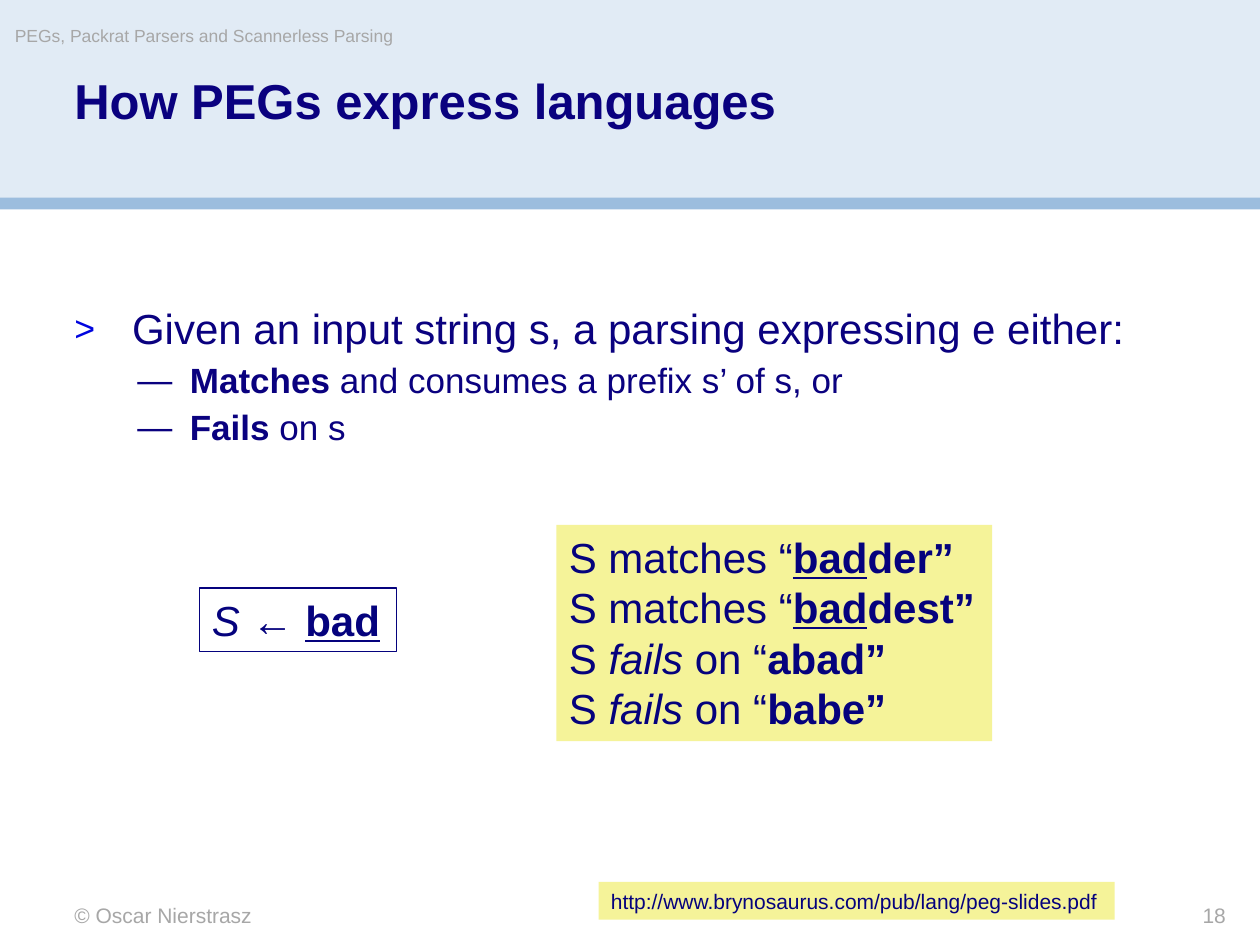
from dataclasses import dataclass

from lxml import etree
from pptx import Presentation
from pptx.dml.color import RGBColor
from pptx.enum.shapes import MSO_SHAPE
from pptx.enum.text import MSO_ANCHOR, MSO_AUTO_SIZE, PP_ALIGN
from pptx.oxml.ns import qn
from pptx.util import Pt

RECTANGLE = MSO_SHAPE.RECTANGLE
TOP, MIDDLE = MSO_ANCHOR.TOP, MSO_ANCHOR.MIDDLE
LEFT, RIGHT = PP_ALIGN.LEFT, PP_ALIGN.RIGHT
NO_FIT, FIT_SHAPE = MSO_AUTO_SIZE.NONE, MSO_AUTO_SIZE.SHAPE_TO_FIT_TEXT


@dataclass(frozen=True)
class Theme:
    font: str = "Arial"
    heading: str = "0A017F"
    ink: str = "05027D"
    muted: str = "A7A7A7"
    marker: str = "0005DF"
    header: str = "E1EBF5"
    rule: str = "9CBDDE"
    note: str = "F5F399"
    title_size: int = 28
    text_size: int = 24
    sub_size: int = 20
    small_size: int = 12
    running_size: int = 10


@dataclass(frozen=True)
class Bullet:
    mark: str
    margin: float
    hanging: float
    size: int
    color: str = ""
    scale: int = 100


class SlideBuilder:
    """Holds the theme and the slide being filled; lengths are in points."""

    def __init__(self, slide, theme):
        self.slide = slide
        self.theme = theme

    def place(self, box):
        return [Pt(length) for length in box]

    def frame(self, shape, wrap=True, anchor=TOP, inset=(0, 0), fit=NO_FIT):
        frame = shape.text_frame
        frame.word_wrap = wrap
        frame.auto_size = fit
        frame.vertical_anchor = anchor
        frame.margin_left = frame.margin_right = Pt(inset[0])
        frame.margin_top = frame.margin_bottom = Pt(inset[1])
        return frame

    def set_text(self, frame, lines, size, color, align=LEFT, bold=None):
        """Each line is a list of (text, marks); marks are letters out of b, i, u."""
        for index, line in enumerate(lines):
            paragraph = frame.paragraphs[0] if index == 0 else frame.add_paragraph()
            paragraph.alignment = align
            font = paragraph.font
            font.name, font.size, font.bold = self.theme.font, Pt(size), bold
            font.color.rgb = RGBColor.from_string(color)
            for text, marks in line:
                run = paragraph.add_run()
                run.text = text
                if "b" in marks:
                    run.font.bold = True
                if "i" in marks:
                    run.font.italic = True
                if "u" in marks:
                    run.font.underline = True

    def rectangle(self, box, fill=None, line=None):
        shape = self.slide.shapes.add_shape(RECTANGLE, *self.place(box))
        shape.shadow.inherit = False
        if fill:
            shape.fill.solid()
            shape.fill.fore_color.rgb = RGBColor.from_string(fill)
        else:
            shape.fill.background()
        if line:
            shape.line.color.rgb = RGBColor.from_string(line)
            shape.line.width = Pt(0.75)
        else:
            shape.line.fill.background()
        return shape

    def title(self, text, box):
        title = self.slide.shapes.title
        # Bring the title in front of the header band.
        self.slide.shapes._spTree.append(title._element)
        title.left, title.top, title.width, title.height = self.place(box)
        frame = self.frame(title)
        self.set_text(frame, [[(text, "")]], self.theme.title_size, self.theme.heading, bold=True)
        frame.paragraphs[0].line_spacing = 0.9

    def label(self, text, box, size, align=LEFT, wrap=True):
        frame = self.frame(self.slide.shapes.add_textbox(*self.place(box)), wrap)
        self.set_text(frame, [[(text, "")]], size, self.theme.muted, align)

    def panel(self, lines, box, size, fill=None, line=None):
        shape = self.rectangle(box, fill, line)
        frame = self.frame(shape, wrap=False, inset=(7.2, 3.6), fit=FIT_SHAPE)
        self.set_text(frame, lines, size, self.theme.ink)

    def bullets(self, items, box):
        """Each item is a (Bullet, line) pair."""
        frame = self.frame(self.slide.shapes.add_textbox(*self.place(box)), anchor=MIDDLE)
        self.set_text(frame, [line for _, line in items], self.theme.text_size, self.theme.heading)
        for paragraph, (bullet, _) in zip(frame.paragraphs, items):
            paragraph.font.size = Pt(bullet.size)
            paragraph.line_spacing = 0.95
            paragraph.space_before = Pt(bullet.size * 0.2)
            self.mark(paragraph, bullet)

    def mark(self, paragraph, bullet):
        """Adds the bullet sign, which must stand before the default run style."""
        properties = paragraph._p.get_or_add_pPr()
        properties.set("marL", str(Pt(bullet.margin)))
        properties.set("indent", str(-Pt(bullet.hanging)))
        parts = []
        if bullet.color:
            color = etree.Element(qn("a:buClr"))
            etree.SubElement(color, qn("a:srgbClr"), val=bullet.color)
            parts.append(color)
        parts.append(etree.Element(qn("a:buSzPct"), val=str(bullet.scale * 1000)))
        parts.append(etree.Element(qn("a:buFont"), typeface=self.theme.font))
        parts.append(etree.Element(qn("a:buChar"), char=bullet.mark))
        run_style = properties.find(qn("a:defRPr"))
        for part in parts:
            run_style.addprevious(part)


def main():
    theme = Theme()
    deck = Presentation()
    deck.slide_width, deck.slide_height = Pt(720), Pt(540)
    title_only = deck.slide_layouts[5]
    builder = SlideBuilder(deck.slides.add_slide(title_only), theme)

    margin, content_width = 42.5, 636
    builder.rectangle((0, 0, 720, 113.5), theme.header)
    builder.rectangle((0, 113, 720, 6.75), theme.rule)
    builder.title("How PEGs express languages", (margin, 44, content_width, 64))

    point = Bullet(">", 33, 33, theme.text_size, theme.marker, 85)
    outcome = Bullet("—", 66, 30, theme.sub_size)
    builder.bullets([
        (point, [("Given an input string s, a parsing expressing e either:", "")]),
        (outcome, [("Matches", "b"), (" and consumes a prefix s’ of s, or", "")]),
        (outcome, [("Fails", "b"), (" on s", "")]),
    ], (margin, 130.5, content_width, 170))

    builder.label("© Oscar Nierstrasz", (margin, 515.5, 300, 14.5), theme.small_size)
    builder.label("PEGs, Packrat Parsers and Scannerless Parsing",
                  (8.5, 14.5, 425, 20), theme.running_size, wrap=False)
    builder.label("18", (594, 516, 106.5, 14.5), theme.small_size, RIGHT)

    builder.panel([[("http://www.brynosaurus.com/pub/lang/peg-slides.pdf", "")]],
                  (342, 504, 295, 21.6), theme.small_size, fill=theme.note)
    builder.panel([[("S ", "i"), ("← ", ""), ("bad", "bu")]],
                  (114, 336, 112.5, 36.5), theme.text_size, line=theme.ink)
    matches = [[("S matches “", ""), ("bad", "bu"), (ending, "b")]
               for ending in ("der”", "dest”")]
    failures = [[("S ", ""), ("fails ", "i"), ("on “", ""), (word, "b")]
                for word in ("abad”", "babe”")]
    builder.panel(matches + failures, (318, 300, 249, 123.5), theme.text_size, fill=theme.note)

    deck.save("out.pptx")


if __name__ == "__main__":
    main()
